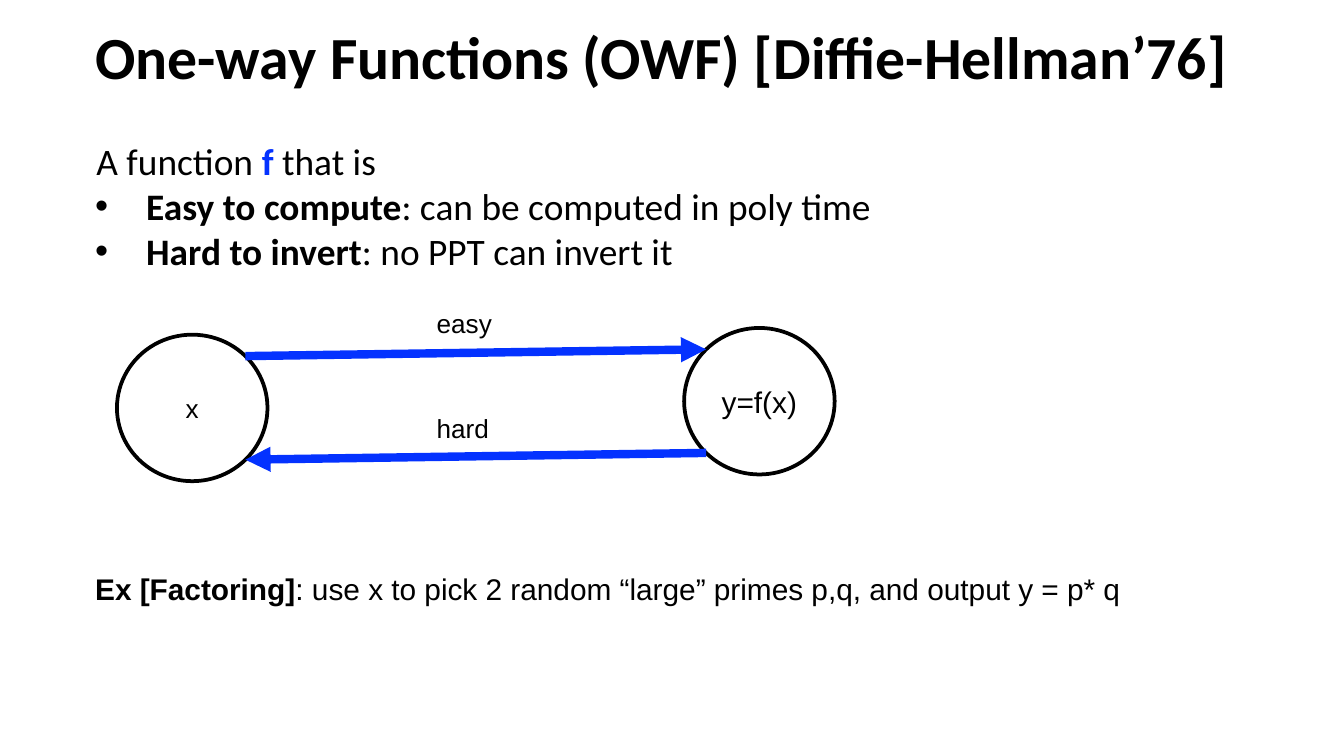
import math

from lxml import etree
from pptx import Presentation
from pptx.dml.color import RGBColor
from pptx.enum.shapes import MSO_CONNECTOR, MSO_SHAPE
from pptx.enum.text import MSO_ANCHOR, PP_ALIGN
from pptx.oxml.ns import qn
from pptx.util import Inches, Pt

STRAIGHT = MSO_CONNECTOR.STRAIGHT
RECTANGLE = MSO_SHAPE.RECTANGLE
OVAL = MSO_SHAPE.OVAL
TOP, MIDDLE = MSO_ANCHOR.TOP, MSO_ANCHOR.MIDDLE
LEFT, CENTER = PP_ALIGN.LEFT, PP_ALIGN.CENTER
BLACK, BLUE, WHITE = "000000", "0432FF", "FFFFFF"


def color(hex_string):
    """Turn a hex string into a colour."""
    return RGBColor.from_string(hex_string)


def add_runs(paragraph, runs, font, size, alignment=LEFT):
    """Fill a paragraph with (text, bold, colour) runs."""
    paragraph.alignment = alignment
    for text, bold, hex_string in runs:
        run = paragraph.add_run()
        run.text = text
        run.font.name = font
        run.font.size = Pt(size)
        run.font.bold = bold
        run.font.color.rgb = color(hex_string)


def add_label(slide, box, runs, font, size, wrap=True):
    """Place a one-paragraph text box."""
    shape = slide.shapes.add_textbox(*map(Inches, box))
    shape.text_frame.word_wrap = wrap
    add_runs(shape.text_frame.paragraphs[0], runs, font, size)


def set_indent(paragraph, margin, indent, bullet=None):
    """Set the left margin, first-line indent and optional bullet."""
    properties = paragraph._p.get_or_add_pPr()
    properties.set("marL", str(Inches(margin)))
    properties.set("indent", str(Inches(indent)))
    if bullet:
        etree.SubElement(properties, qn("a:buFont")).set("typeface", "Arial")
        etree.SubElement(properties, qn("a:buChar")).set("char", bullet)


def add_definition(slide, box):
    """Place the definition with its two bulleted properties."""
    shape = slide.shapes.add_shape(RECTANGLE, *map(Inches, box))
    shape.shadow.inherit = False
    shape.fill.solid()
    shape.fill.fore_color.rgb = color(WHITE)
    shape.line.fill.background()
    frame = shape.text_frame
    frame.word_wrap = True
    frame.vertical_anchor = TOP
    frame.margin_top = frame.margin_bottom = Inches(0.1)
    introduction = frame.paragraphs[0]
    add_runs(introduction, [("A function ", False, BLACK), ("f", True, BLUE),
                            (" that is", False, BLACK)], "Calibri", 20)
    set_indent(introduction, 0.01, 0)
    for term, meaning in (("Easy to compute", ": can be computed in poly time"),
                          ("Hard to invert", ": no PPT can invert it")):
        paragraph = frame.add_paragraph()
        add_runs(paragraph, [(term, True, BLACK), (meaning, False, BLACK)], "Calibri", 20)
        set_indent(paragraph, 0.38, -0.38, "•")


def add_node(slide, box, text, size):
    """Place an outlined circle with centred text."""
    shape = slide.shapes.add_shape(OVAL, *map(Inches, box))
    shape.shadow.inherit = False
    shape.fill.background()
    shape.line.color.rgb = color(BLACK)
    shape.line.width = Pt(2)
    shape.text_frame.vertical_anchor = MIDDLE
    add_runs(shape.text_frame.paragraphs[0], [(text, False, BLACK)], "Arial", size, CENTER)


def diagonal_point(box, horizontal, vertical):
    """Find the point of an ellipse on the diagonal with the given signs."""
    left, top, width, height = box
    reach = math.sqrt(0.5)
    return (left + width / 2 * (1 + horizontal * reach),
            top + height / 2 * (1 + vertical * reach))


def add_arrow(slide, start, end):
    """Draw a thick blue arrow from start to end."""
    connector = slide.shapes.add_connector(STRAIGHT, *map(Inches, (*start, *end)))
    connector.line.color.rgb = color(BLUE)
    connector.line.width = Pt(4.5)
    etree.SubElement(connector.line._get_or_add_ln(), qn("a:tailEnd")).set("type", "triangle")
    etree.SubElement(connector._element.spPr, qn("a:effectLst"))


def add_mapping(slide, box):
    """Draw input and output circles joined by the easy and hard arrows."""
    left, top, width, height = box
    node_width, node_height = 1.12, 1.09
    source = (left, top + height - node_height, node_width, node_height)
    target = (left + width - node_width, top, node_width, node_height)
    add_node(slide, source, "x", 14)
    add_node(slide, target, "y=f(x)", 16)
    add_arrow(slide, diagonal_point(source, 1, -1), diagonal_point(target, -1, -1))
    add_arrow(slide, diagonal_point(target, -1, 1), diagonal_point(source, 1, 1))
    for text, offset, label_width in (("easy", -0.2, 0.62), ("hard", 0.58, 0.59)):
        label_box = (left + 2.28, top + offset, label_width, 0.34)
        add_label(slide, label_box, [(text, False, BLACK)], "Arial", 14, wrap=False)


def main():
    """Build and save the slide."""
    presentation = Presentation()
    presentation.slide_width = Inches(10)
    presentation.slide_height = presentation.slide_width * 9 // 16
    slide = presentation.slides.add_slide(presentation.slide_layouts[6])
    margin = 0.61
    add_definition(slide, (margin, 0.93, 9, 1.55))
    add_label(slide, (margin, 0.1, 9, 1.09),
              [("One-way Functions (OWF) [Diffie-Hellman’76]", True, BLACK)], "Calibri", 32)
    add_mapping(slide, (0.87, 2.44, 5.34, 1.14))
    add_label(slide, (margin, 4.2, 8.19, 0.37),
              [("Ex [Factoring]", True, BLACK),
               (": use x to pick 2 random “large” primes p,q, and output y = p* q",
                False, BLACK)], "Arial", 16)
    presentation.save("out.pptx")


if __name__ == "__main__":
    main()
